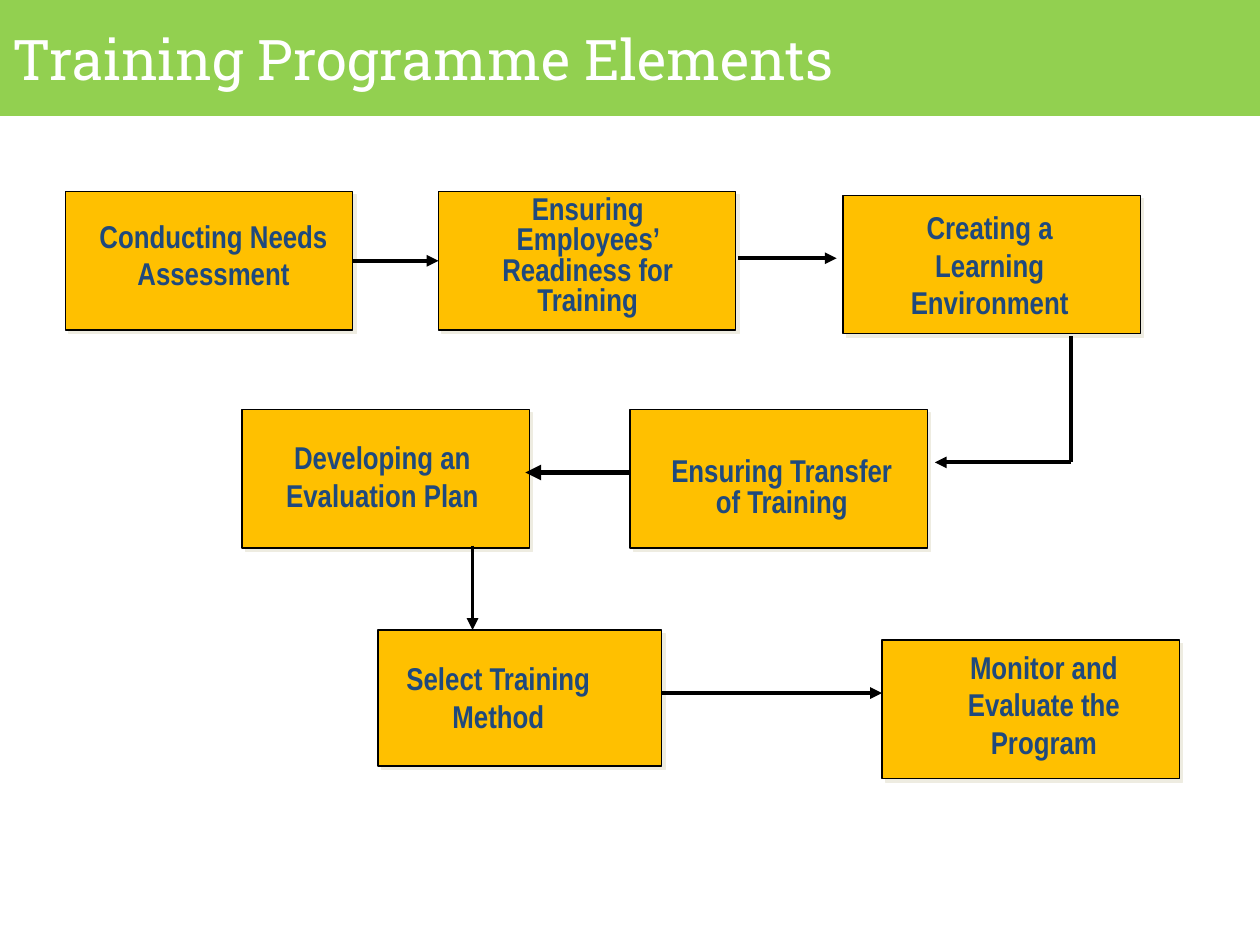
from lxml import etree
from pptx import Presentation
from pptx.dml.color import RGBColor
from pptx.enum.shapes import MSO_CONNECTOR, MSO_SHAPE
from pptx.enum.text import MSO_ANCHOR, MSO_AUTO_SIZE, PP_ALIGN
from pptx.oxml import parse_xml
from pptx.oxml.ns import nsdecls, qn
from pptx.util import Inches, Pt

RECT, STRAIGHT = MSO_SHAPE.RECTANGLE, MSO_CONNECTOR.STRAIGHT
LEFT, CENTER, MIDDLE = PP_ALIGN.LEFT, PP_ALIGN.CENTER, MSO_ANCHOR.MIDDLE
TOP, NO_AUTOFIT = MSO_ANCHOR.TOP, MSO_AUTO_SIZE.NONE
RIGHT_SIDE, LEFT_SIDE = 3, 1
SHADOW = (f'<a:effectLst {nsdecls("a")}><a:outerShdw dist="35560" dir="2700000" '
          'algn="ctr" rotWithShape="0"><a:srgbClr val="EEECE1"/>'
          '</a:outerShdw></a:effectLst>')


def rgb(value):
    return RGBColor.from_string(value)


def add_text(p, text, font, size, color, bold=False):
    r = p.add_run()
    r.text = text
    r.font.name, r.font.size, r.font.bold = font, Pt(size), bold
    r.font.color.rgb = rgb(color)


prs = Presentation()
prs.slide_width, prs.slide_height = Inches(10), Inches(7.5)
s = prs.slides.add_slide(prs.slide_layouts[5])

# Title band
title = s.shapes.title
title.left, title.top = Inches(0), Inches(0)
title.width, title.height = Inches(10), Inches(0.92)
title.fill.solid()
title.fill.fore_color.rgb = rgb("92D050")
tf = title.text_frame
tf.auto_size, tf.vertical_anchor = NO_AUTOFIT, MIDDLE
tf.paragraphs[0].alignment = LEFT
add_text(tf.paragraphs[0], "Training Programme Elements", "Roboto Slab", 32, "FFFFFF")

# Steps: label, box (left, top, width, height), label (left, top, height), line spacing
steps = [
    ("Conducting Needs Assessment", (0.52, 1.52, 2.28, 1.1), (0.66, 1.66, 0.73), 1),
    ("Ensuring Employees’ Readiness for Training",
     (3.48, 1.52, 2.36, 1.1), (3.63, 1.5, 1.1), 0.8),
    ("Creating a Learning Environment", (6.69, 1.55, 2.36, 1.1), (6.82, 1.59, 1.04), 1),
    ("Ensuring Transfer of Training", (5, 3.25, 2.36, 1.1), (5.17, 3.58, 0.59), 0.8),
    ("Developing an Evaluation Plan", (1.92, 3.25, 2.28, 1.1), (2, 3.42, 0.72), 1),
    ("Select Training Method", (3, 5, 2.25, 1.08), (2.92, 5.17, 0.72), 1),
    ("Monitor and Evaluate the Program", (7, 5.08, 2.36, 1.1), (7.25, 5.08, 1.02), 1),
]
boxes = []
for label, box, (left, top, height), spacing in steps:
    sp = s.shapes.add_shape(RECT, *map(Inches, box))
    sp.fill.solid()
    sp.fill.fore_color.rgb = rgb("FFC000")
    sp.line.color.rgb = rgb("000000")
    sp.line.width = Pt(0.75)
    sp._element.spPr.append(parse_xml(SHADOW))
    boxes.append(sp)

    tb = s.shapes.add_textbox(Inches(left), Inches(top), Inches(2.07), Inches(height))
    tf = tb.text_frame
    tf.word_wrap, tf.vertical_anchor = True, TOP
    tf.margin_left = tf.margin_right = Inches(0.11)
    tf.margin_top = tf.margin_bottom = Inches(0.06)
    p = tf.paragraphs[0]
    p.alignment, p.line_spacing = CENTER, spacing
    add_text(p, label, "Arial Narrow", 18, "1F497D", True)

# Flow lines: start x, y, end x, y, width, arrowhead
flows = [
    (2.8, 2.07, 3.48, 2.07, 2.25, True),
    (5.86, 2.05, 6.64, 2.05, 2.25, True),
    (8.5, 2.67, 8.5, 3.67, 2.25, False),
    (8.5, 3.67, 7.42, 3.67, 2.25, True),
    (5, 3.75, 4.17, 3.75, 3, True),
    (3.75, 4.33, 3.75, 5, 2.25, True),
    (5.25, 5.5, 7, 5.5, 2.25, True),
]
lines = []
for *ends, width, arrow in flows:
    c = s.shapes.add_connector(STRAIGHT, *map(Inches, ends))
    c.line.color.rgb = rgb("000000")
    c.line.width = Pt(width)
    if arrow:
        etree.SubElement(c.line._get_or_add_ln(), qn("a:tailEnd"), type="triangle")
    etree.SubElement(c._element.spPr, qn("a:effectLst"))
    lines.append(c)
lines[0].begin_connect(boxes[0], RIGHT_SIDE)
lines[0].end_connect(boxes[1], LEFT_SIDE)

prs.save("out.pptx")
